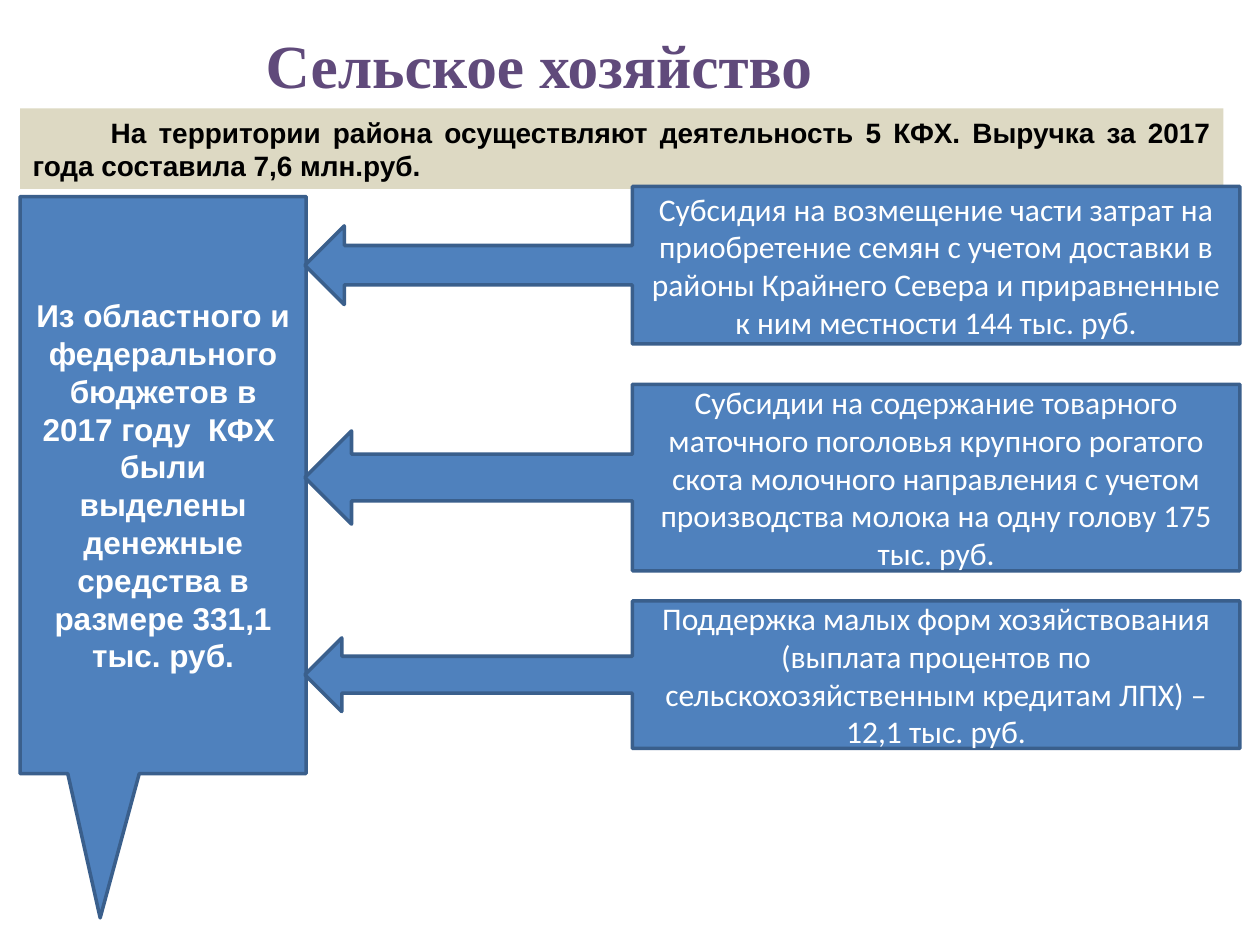
from pptx import Presentation
from pptx.dml.color import RGBColor
from pptx.enum.shapes import MSO_SHAPE
from pptx.enum.text import MSO_ANCHOR, PP_ALIGN
from pptx.util import Inches, Pt

BLUE, EDGE, SAND = "4F81BD", "3A5F8C", "DDD9C3"
PURPLE, WHITE, BLACK = "604A7B", "FFFFFF", "000000"

GRANTS = [
    (1.48, 1.25, "Субсидия на возмещение части затрат на приобретение семян с учетом "
                 "доставки в районы Крайнего Севера и приравненные к ним местности "
                 "144 тыс. руб."),
    (3.05, 1.48, "Субсидии на содержание товарного маточного поголовья крупного "
                 "рогатого скота молочного направления с учетом производства молока "
                 "на одну голову 175 тыс. руб."),
    (4.77, 1.17, "Поддержка малых форм хозяйствования (выплата процентов по "
                 "сельскохозяйственным кредитам ЛПХ) – 12,1 тыс. руб."),
]


def color(code):
    return RGBColor.from_string(code)


def write(shape, text, size=18, font="Calibri", tint=WHITE, bold=False,
          align=PP_ALIGN.CENTER, anchor=MSO_ANCHOR.MIDDLE, wrap=True, indent=0):
    frame = shape.text_frame
    frame.word_wrap = wrap
    frame.vertical_anchor = anchor
    para = frame.paragraphs[0]
    para.alignment = align
    if indent:
        para._p.get_or_add_pPr().set("indent", str(Inches(indent)))
    run = para.add_run()
    run.text = text
    run.font.size = Pt(size)
    run.font.name = font
    run.font.bold = bold
    run.font.color.rgb = color(tint)


def add_shape(slide, kind, box, fill, line=None):
    shape = slide.shapes.add_shape(kind, *map(Inches, box))
    shape.shadow.inherit = False
    shape.fill.solid()
    shape.fill.fore_color.rgb = color(fill)
    if line:
        shape.line.color.rgb = color(line)
        shape.line.width = Pt(2)
    else:
        shape.line.fill.background()
    return shape


def add_title(slide, box):
    title = slide.shapes.add_textbox(*map(Inches, box))
    write(title, "Сельское хозяйство", size=35, font="Times New Roman", tint=PURPLE,
          bold=True, align=PP_ALIGN.LEFT, anchor=MSO_ANCHOR.TOP, wrap=False)


def add_intro(slide, box):
    band = add_shape(slide, MSO_SHAPE.RECTANGLE, box, SAND)
    write(band, "На территории района осуществляют деятельность 5 КФХ. "
                "Выручка за 2017 года составила 7,6 млн.руб.",
          size=16, font="Arial", tint=BLACK, bold=True,
          align=PP_ALIGN.JUSTIFY, indent=0.62)


def add_total(slide, box):
    total = add_shape(slide, MSO_SHAPE.RECTANGULAR_CALLOUT, box, BLUE, EDGE)
    # Tip of the callout, below the box
    total.adjustments[0] = -0.22
    total.adjustments[1] = 0.75
    write(total, "Из областного и федерального бюджетов в 2017 году  КФХ  были "
                 "выделены денежные средства в размере 331,1 тыс. руб.",
          font="Arial", bold=True)


def add_grants(slide, left, width):
    for top, height, text in GRANTS:
        box = (left, top, width, height)
        grant = add_shape(slide, MSO_SHAPE.LEFT_ARROW_CALLOUT, box, BLUE, EDGE)
        write(grant, text)


def main():
    deck = Presentation()
    deck.slide_width, deck.slide_height = Inches(10), Inches(7.5)
    slide = deck.slides.add_slide(deck.slide_layouts[6])
    # Heading and summary
    add_title(slide, (2.01, 0.17, 4.58, 0.69))
    add_intro(slide, (0.16, 0.86, 9.55, 0.64))
    # Total sum and its three parts
    add_total(slide, (0.16, 1.56, 2.27, 4.58))
    add_grants(slide, 2.42, 7.42)
    deck.save("out.pptx")


if __name__ == "__main__":
    main()
